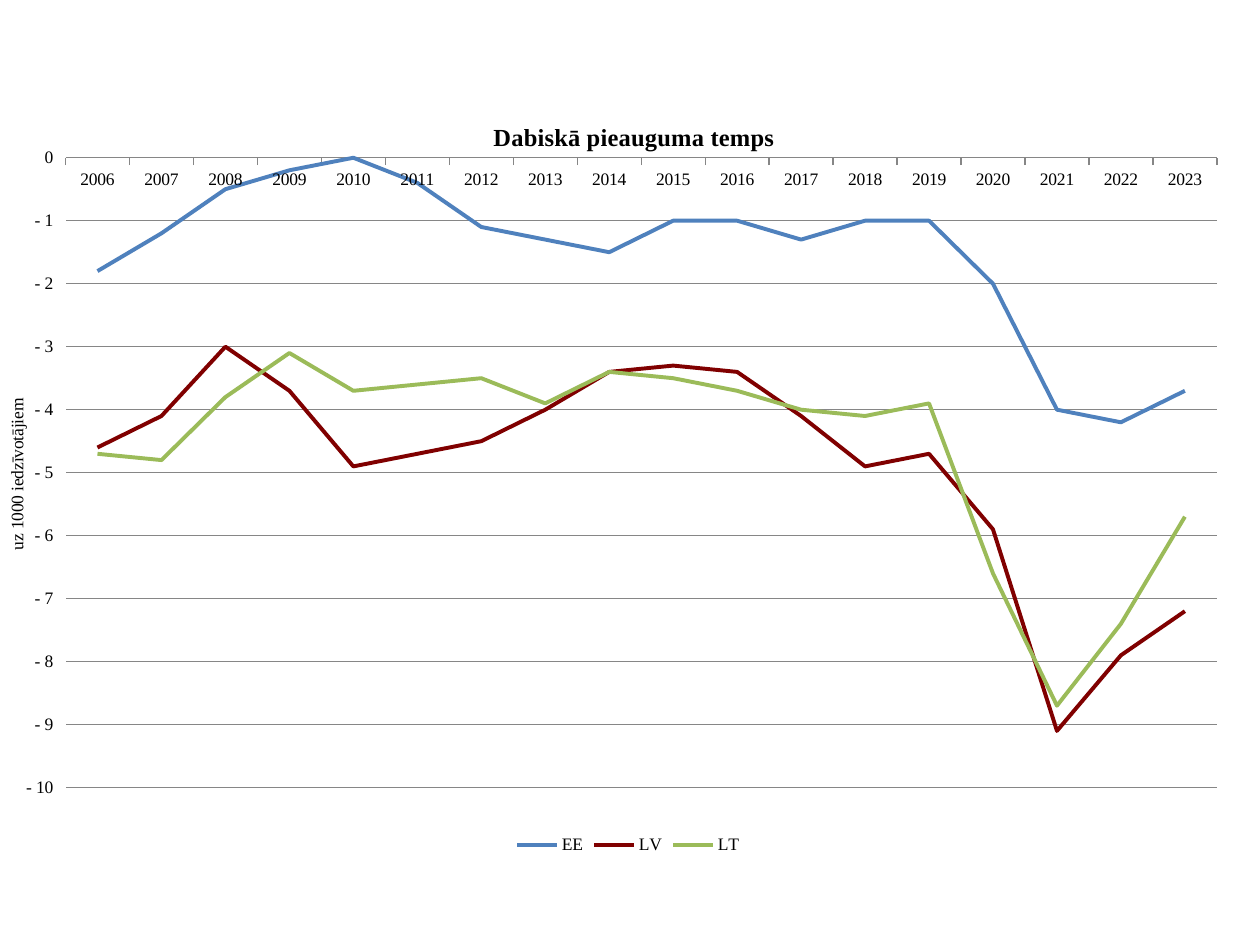
from lxml import etree
from pptx import Presentation
from pptx.chart.data import CategoryChartData
from pptx.dml.color import RGBColor
from pptx.enum.chart import XL_CHART_TYPE, XL_LEGEND_POSITION, XL_MARKER_STYLE, XL_TICK_MARK
from pptx.oxml.ns import qn
from pptx.util import Cm, Pt

FONT = "Times New Roman"
BLACK = RGBColor(0x00, 0x00, 0x00)
GRAY = RGBColor(0x86, 0x86, 0x86)
BLUE = RGBColor(0x4F, 0x81, 0xBD)
MAROON = RGBColor(0x80, 0x00, 0x00)
GREEN = RGBColor(0x9B, 0xBB, 0x59)

COUNTRIES = [
    ("EE", BLUE, [-1.8, -1.2, -0.5, -0.2, 0, -0.4, -1.1, -1.3, -1.5,
                  -1, -1, -1.3, -1, -1, -2, -4, -4.2, -3.7]),
    ("LV", MAROON, [-4.6, -4.1, -3, -3.7, -4.9, -4.7, -4.5, -4, -3.4,
                    -3.3, -3.4, -4.1, -4.9, -4.7, -5.9, -9.1, -7.9, -7.2]),
    ("LT", GREEN, [-4.7, -4.8, -3.8, -3.1, -3.7, -3.6, -3.5, -3.9, -3.4,
                   -3.5, -3.7, -4, -4.1, -3.9, -6.6, -8.7, -7.4, -5.7]),
]


def set_layout(element, position, **fractions):
    """Place a chart part by fractions of the chart area."""
    layout = element.find(qn("c:layout"))
    if layout is not None:
        element.remove(layout)
    layout = etree.Element(qn("c:layout"))
    element.insert(position, layout)
    manual = etree.SubElement(layout, qn("c:manualLayout"))
    if "w" in fractions:
        etree.SubElement(manual, qn("c:layoutTarget")).set("val", "inner")
    for mode in ("xMode", "yMode"):
        etree.SubElement(manual, qn("c:" + mode)).set("val", "edge")
    for name, value in fractions.items():
        etree.SubElement(manual, qn("c:" + name)).set("val", str(value))


def write_title(title, text, size, bold, x, y):
    run = title.text_frame.paragraphs[0].add_run()
    run.text = text
    run.font.name = FONT
    run.font.size = Pt(size)
    run.font.bold = bold
    run.font.color.rgb = BLACK
    set_layout(title._element, 1, x=x, y=y)


presentation = Presentation()
presentation.slide_width = Cm(25.4)
presentation.slide_height = Cm(19.05)
slide = presentation.slides.add_slide(presentation.slide_layouts[6])

chart_data = CategoryChartData()
chart_data.categories = [str(year) for year in range(2006, 2024)]
for name, color, values in COUNTRIES:
    chart_data.add_series(name, values)

chart = slide.shapes.add_chart(
    XL_CHART_TYPE.LINE, Cm(-0.08), Cm(1.73), Cm(25.48), Cm(15.6), chart_data
).chart
chart.font.name = FONT
chart.font.size = Pt(10)
chart.font.color.rgb = BLACK
chart.has_title = True
write_title(chart.chart_title, "Dabiskā pieauguma temps", 14, True, 0.39, 0.04)
set_layout(chart._chartSpace.chart.plotArea, 0, x=0.055, y=0.093, w=0.911, h=0.814)

chart.has_legend = True
chart.legend.position = XL_LEGEND_POSITION.BOTTOM
chart.legend.include_in_layout = False

plot = chart.plots[0]
plot.vary_by_categories = False
for series, (name, color, values) in zip(plot.series, COUNTRIES):
    series.smooth = False
    series.marker.style = XL_MARKER_STYLE.NONE
    series.format.line.color.rgb = color
    series.format.line.width = Pt(2.25)

category_axis = chart.category_axis
category_axis.major_tick_mark = XL_TICK_MARK.OUTSIDE
category_axis.format.line.color.rgb = GRAY

value_axis = chart.value_axis
value_axis.minimum_scale = -10
value_axis.maximum_scale = 0
value_axis.major_unit = 1
value_axis.major_tick_mark = XL_TICK_MARK.OUTSIDE
value_axis.format.line.fill.background()
value_axis.major_gridlines.format.line.color.rgb = GRAY
value_axis.tick_labels.number_format = r"#\ ##0"
value_axis.tick_labels.number_format_is_linked = False
value_axis.has_title = True
write_title(value_axis.axis_title, "uz 1000 iedzīvotājiem", 10, False, 0.005, 0.4)
text_body = value_axis.axis_title.text_frame._txBody
text_body.bodyPr.set("rot", "-5400000")
text_body.bodyPr.set("vert", "horz")

presentation.save("out.pptx")
